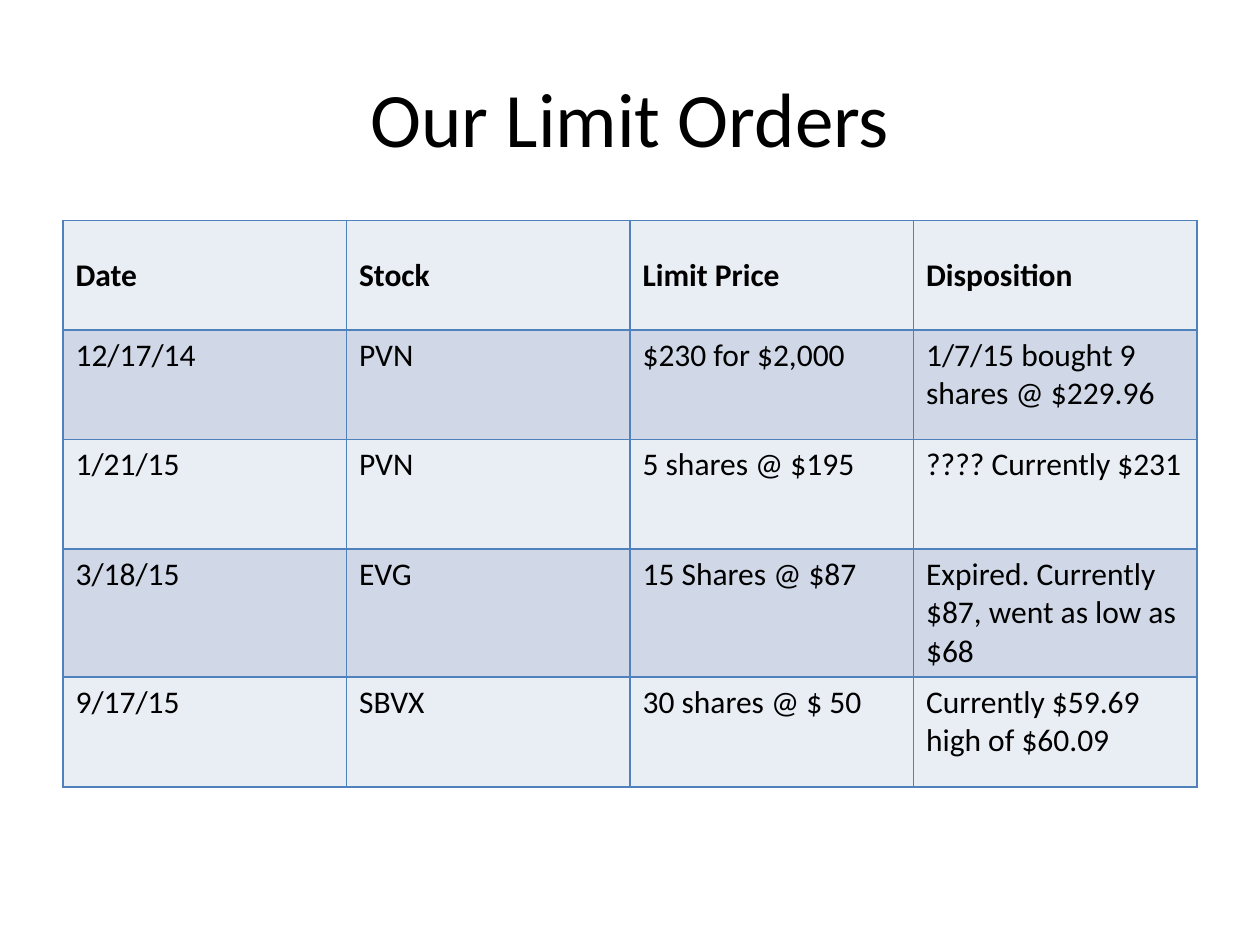
from dataclasses import astuple, dataclass

from lxml import etree
from pptx import Presentation
from pptx import util as u
from pptx.dml.color import RGBColor
from pptx.enum import text
from pptx.oxml import ns

BLACK = RGBColor(0x00, 0x00, 0x00)
LIGHT_BAND = RGBColor(0xE9, 0xED, 0xF4)
DARK_BAND = RGBColor(0xD0, 0xD8, 0xE8)
GRID_BLUE = RGBColor(0x4F, 0x81, 0xBD)
FONT = "Calibri"
MARGIN, CONTENT_WIDTH = 36, 648
ROW_HEIGHT = 62.64


@dataclass
class LimitOrder:
    date: str
    stock: str
    limit_price: str
    disposition: str


HEADINGS = LimitOrder("Date", "Stock", "Limit Price", "Disposition")
ORDERS = [
    LimitOrder("12/17/14", "PVN", "$230 for $2,000", "1/7/15 bought 9 shares @ $229.96"),
    LimitOrder("1/21/15", "PVN", "5 shares @ $195", "???? Currently $231"),
    LimitOrder("3/18/15", "EVG", "15 Shares @ $87", "Expired. Currently $87, went as low as $68"),
    LimitOrder("9/17/15", "SBVX", "30 shares @ $ 50", "Currently $59.69 high of $60.09"),
]


def format_runs(paragraph, size: float, bold: bool = False) -> None:
    for run in paragraph.runs:
        run.font.name = FONT
        run.font.size = u.Pt(size)
        run.font.bold = bold
        run.font.color.rgb = BLACK


def add_borders(cell, color: RGBColor, width: float) -> None:
    """Draw all four sides; border elements must come before the cell fill."""
    properties = cell._tc.get_or_add_tcPr()
    for position, side in enumerate(("lnL", "lnR", "lnT", "lnB")):
        border = etree.Element(ns.qn(f"a:{side}"), w=str(u.Pt(width)))
        fill = etree.SubElement(border, ns.qn("a:solidFill"))
        etree.SubElement(fill, ns.qn("a:srgbClr"), val=str(color))
        properties.insert(position, border)


def fill_row(table, row: int, order: LimitOrder) -> None:
    is_heading = row == 0
    table.rows[row].height = u.Pt(ROW_HEIGHT)
    for column, wording in enumerate(astuple(order)):
        cell = table.cell(row, column)
        cell.text_frame.text = wording
        format_runs(cell.text_frame.paragraphs[0], 18, is_heading)
        cell.vertical_anchor = text.MSO_ANCHOR.MIDDLE if is_heading else text.MSO_ANCHOR.TOP
        cell.fill.solid()
        cell.fill.fore_color.rgb = DARK_BAND if row % 2 else LIGHT_BAND
        add_borders(cell, GRID_BLUE, 1)


def main() -> None:
    deck = Presentation()
    deck.slide_width, deck.slide_height = u.Pt(720), u.Pt(540)
    slide = deck.slides.add_slide(deck.slide_layouts[5])

    # Title
    title = slide.shapes.title
    title.left, title.top = u.Pt(MARGIN), u.Pt(21.6)
    title.width, title.height = u.Pt(CONTENT_WIDTH), u.Pt(90)
    title.text_frame.text = "Our Limit Orders"
    title.text_frame.vertical_anchor = text.MSO_ANCHOR.MIDDLE
    title.text_frame.paragraphs[0].alignment = text.PP_ALIGN.CENTER
    format_runs(title.text_frame.paragraphs[0], 44)

    # Limit orders, with the headings as first row
    rows = [HEADINGS, *ORDERS]
    orders_table = slide.shapes.add_table(
        len(rows), 4, u.Pt(MARGIN), u.Pt(126),
        u.Pt(CONTENT_WIDTH), u.Pt(ROW_HEIGHT * len(rows)),
    ).table
    for row, order in enumerate(rows):
        fill_row(orders_table, row, order)

    deck.save("out.pptx")


if __name__ == "__main__":
    main()
